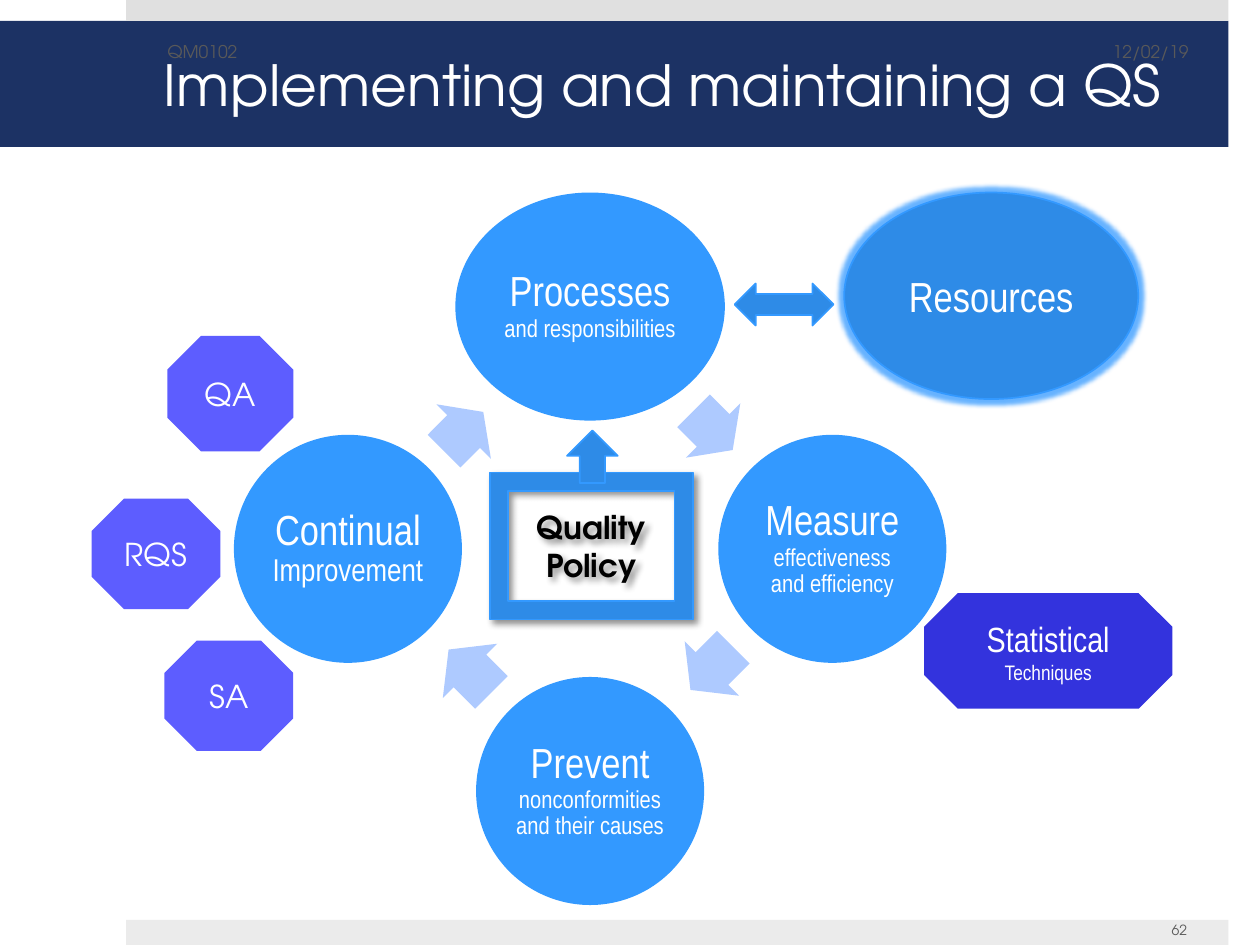
import math

import pptx
import pptx.util
import pptx.oxml
from pptx.dml.color import RGBColor
from pptx.enum.shapes import MSO_SHAPE
from pptx.enum.text import MSO_ANCHOR, MSO_AUTO_SIZE, PP_ALIGN

Pt = pptx.util.Pt

WHITE = RGBColor(0xFF, 0xFF, 0xFF)
BLACK = RGBColor(0, 0, 0)
GREY = RGBColor(0x59, 0x59, 0x59)
TOP_BAR = RGBColor(0xE0, 0xE0, 0xE0)
BOTTOM_BAR = RGBColor(0xEB, 0xEB, 0xEB)
NAVY = RGBColor(0x1C, 0x32, 0x64)
BLUE = RGBColor(0x33, 0x99, 0xFF)
DEEP_BLUE = RGBColor(0x2E, 0x8B, 0xE7)
PALE_BLUE = RGBColor(0xAE, 0xCA, 0xFF)
VIOLET = RGBColor(0x5D, 0x5D, 0xFF)
INDIGO = RGBColor(0x33, 0x33, 0xDD)

NARROW = "Arial Narrow"
ADVENTOR = "TeX Gyre Adventor"
NAMESPACE = 'xmlns:a="http://schemas.openxmlformats.org/drawingml/2006/main"'
GLOW = (f'<a:effectLst {NAMESPACE}><a:glow rad="63500"><a:srgbClr val="3399FF">'
        '<a:alpha val="75000"/></a:srgbClr></a:glow></a:effectLst>')
SHADOW = (f'<a:effectLst {NAMESPACE}><a:outerShdw blurRad="50800" dist="38100" dir="2700000">'
          '<a:srgbClr val="000000"><a:alpha val="43000"/></a:srgbClr></a:outerShdw></a:effectLst>')


class CycleSlide:
    """Holds the text style and the slide, and draws each kind of element on it."""

    def __init__(self, deck):
        self.slide = deck.slides.add_slide(deck.slide_layouts[5])
        self.frame = {"word_wrap": True, "auto_size": MSO_AUTO_SIZE.NONE,
                      "vertical_anchor": MSO_ANCHOR.MIDDLE}

    def set_text(self, shape, paragraphs, font, color, align=PP_ALIGN.CENTER,
                 spacing=1.0, bold=False, margins=(7.2, 3.6, 7.2, 3.6)):
        frame = shape.text_frame
        sides = ("margin_left", "margin_top", "margin_right", "margin_bottom")
        values = {**self.frame, **dict(zip(sides, map(Pt, margins)))}
        for name, value in values.items():
            setattr(frame, name, value)
        for index, spans in enumerate(paragraphs):
            para = frame.add_paragraph() if index else frame.paragraphs[0]
            para.alignment, para.line_spacing = align, spacing
            for text, size in spans:
                span = para.add_run()
                span.text = text
                span.font.color.rgb = color
                for name, value in {"name": font, "size": Pt(size), "bold": bold}.items():
                    setattr(span.font, name, value)

    def title(self, text, left, top, width, height):
        shape = self.slide.shapes.title
        places = {"left": left, "top": top, "width": width, "height": height}
        for name, value in places.items():
            setattr(shape, name, Pt(value))
        shape.fill.solid()
        shape.fill.fore_color.rgb = NAVY
        self.set_text(shape, [[(text, 32.4)]], ADVENTOR, WHITE, PP_ALIGN.LEFT,
                      margins=(93.6, 3.6, 21.6, 3.6))

    def label(self, text, size, align, left, top, width, height=28.8):
        box = self.slide.shapes.add_textbox(*map(Pt, (left, top, width, height)))
        self.set_text(box, [[(text, size)]], ADVENTOR, GREY, align)

    def shape(self, kind, fill, left, top, width, height, line=None, effect=None):
        shape = self.slide.shapes.add_shape(kind, *map(Pt, (left, top, width, height)))
        shape.shadow.inherit = False
        shape.fill.solid()
        shape.fill.fore_color.rgb = fill
        if line is None:
            shape.line.fill.background()
        else:
            shape.line.color.rgb = line
            shape.line.width = Pt(1)
        if effect:
            properties = shape.element.spPr
            properties.replace(properties.find("{*}effectLst"), pptx.oxml.parse_xml(effect))
        return shape

    def stage(self, center_x, center_y, width, spans):
        circle = self.shape(MSO_SHAPE.OVAL, BLUE, center_x - width / 2, center_y - 65.15,
                            width, 130.3)
        self.set_text(circle, [spans], NARROW, WHITE, spacing=0.9, margins=(2.16,) * 4)

    def turn_arrow(self, center_x, center_y, length, angle):
        arrow = self.shape(MSO_SHAPE.RIGHT_ARROW, PALE_BLUE, center_x - length / 2,
                           center_y - 22, length, 44)
        arrow.adjustments[0], arrow.adjustments[1] = 0.6, 0.5
        arrow.rotation = angle

    def octagon(self, paragraphs, font, fill, left, top, width, height):
        shape = self.shape(MSO_SHAPE.OCTAGON, fill, left, top, width, height)
        self.set_text(shape, paragraphs, font, WHITE)


def main():
    deck = pptx.Presentation()
    deck.slide_width, deck.slide_height = Pt(720), Pt(540)
    page = CycleSlide(deck)

    page.title("Implementing and maintaining a QS", 0, 12, 702, 72)
    page.shape(MSO_SHAPE.RECTANGLE, TOP_BAR, 72, 0, 630, 12)
    page.shape(MSO_SHAPE.RECTANGLE, BOTTOM_BAR, 72, 525.6, 630, 14.4)
    page.label("12/02/19", 10, PP_ALIGN.RIGHT, 518.4, 15, 167.8)
    page.label("62", 8, PP_ALIGN.CENTER, 656, 517, 36)
    page.label("QM0102", 10, PP_ALIGN.LEFT, 88.6, 15, 228)

    stages = [
        (154, [("Processes", 24), (" ", 20), ("and responsibilities", 14)]),
        (130.3, [("Measure", 24), (" ", 20), ("effectiveness and efficiency", 14)]),
        (130.3, [("Prevent", 24), (" ", 20), ("nonconformities and their causes", 14)]),
        (130.3, [("Continual ", 24), ("Improvement", 18)]),
    ]
    for index, (width, spans) in enumerate(stages):
        angle = math.radians(90 * index - 90)
        page.stage(337.2 + 138.4 * math.cos(angle), 313.6 + 138.4 * math.sin(angle),
                   width, spans)

    arrows = [(407.5, 246, 31.7), (406.8, 382, 34.6), (268.6, 383.4, 34.6), (265, 246.6, 31.7)]
    for index, (center_x, center_y, length) in enumerate(arrows):
        page.turn_arrow(center_x, center_y, length, 45 + 90 * index)

    page.shape(MSO_SHAPE.LEFT_RIGHT_ARROW, DEEP_BLUE, 419.8, 162, 56.5, 24, BLUE)
    resources = page.shape(MSO_SHAPE.OVAL, DEEP_BLUE, 482.4, 110, 168, 118, BLUE, GLOW)
    page.set_text(resources, [[("Resources", 24)]], NARROW, WHITE)

    policy = page.shape(MSO_SHAPE.FRAME, DEEP_BLUE, 280, 270, 116, 84, BLUE, SHADOW)
    page.set_text(policy, [[("Quality Policy", 18)]], ADVENTOR, BLACK, bold=True)
    page.shape(MSO_SHAPE.UP_ARROW, DEEP_BLUE, 324, 246, 29, 30, BLUE)

    tools = [("QA", 95.6, 192, 72, 66), ("RQS", 52.4, 285, 73.6, 63), ("SA", 94, 366, 73.6, 63)]
    for text, *place in tools:
        page.octagon([[(text, 18)]], ADVENTOR, VIOLET, *place)
    page.octagon([[("Statistical", 20)], [("Techniques", 12)]], NARROW, INDIGO,
                 528, 339, 142, 66)

    deck.save("out.pptx")


if __name__ == "__main__":
    main()
